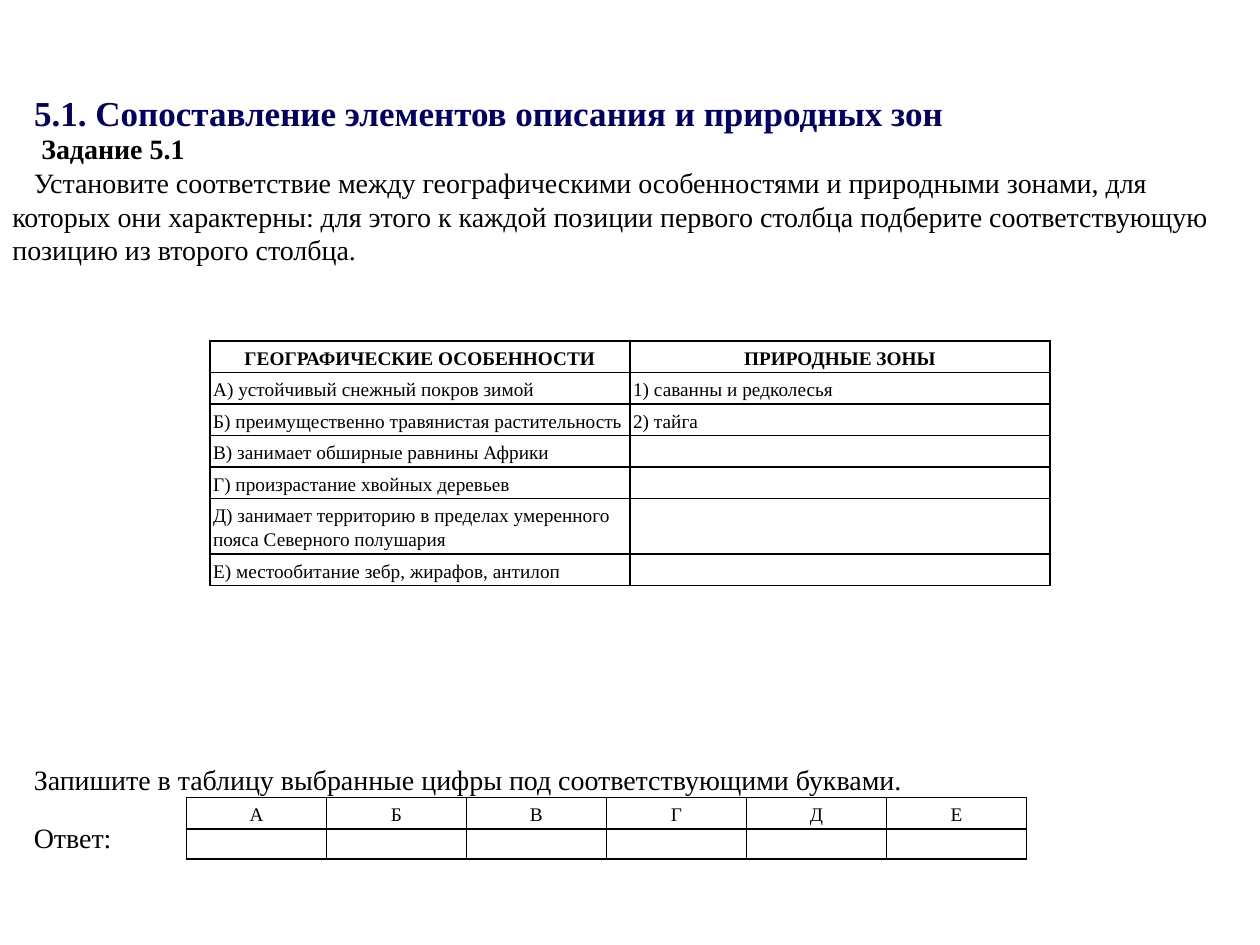
from dataclasses import dataclass

from lxml.etree import SubElement
from pptx import Presentation
from pptx.dml.color import RGBColor
from pptx.enum.text import MSO_ANCHOR as Anchor, MSO_AUTO_SIZE as AutoSize, PP_ALIGN as Align
from pptx.oxml import parse_xml
from pptx.oxml.ns import nsdecls, qn
from pptx.util import Emu, Inches, Pt


@dataclass(frozen=True)
class Theme:
    font: str = "Times New Roman"
    title_color: str = "000066"
    ink: str = "000000"
    title_size: float = 20
    body_size: float = 16
    cell_size: float = 11
    indent: float = 0.17
    cell_margin: float = 0.025
    cell_spacing: float = 1.15
    border: float = 1


@dataclass(frozen=True)
class Grid:
    """A table: left, top and width as shares of the slide, row heights in inches."""
    left: float
    top: float
    width: float
    heights: tuple
    rows: tuple
    header_bold: bool = False


THEME = Theme()
W, H = Inches(10), Inches(7.5)

FEATURES = Grid(
    1 / 6, 0.361, 2 / 3, (0.25,) * 5 + (0.44, 0.25),
    (
        ("ГЕОГРАФИЧЕСКИЕ ОСОБЕННОСТИ", "ПРИРОДНЫЕ ЗОНЫ"),
        ("А) устойчивый снежный покров зимой", "1) саванны и редколесья"),
        ("Б) преимущественно травянистая растительность", "2) тайга"),
        ("В) занимает обширные равнины Африки", ""),
        ("Г) произрастание хвойных деревьев", ""),
        ("Д) занимает территорию в пределах умеренного пояса Северного полушария", ""),
        ("Е) местообитание зебр, жирафов, антилоп", ""),
    ),
    header_bold=True,
)
ANSWERS = Grid(0.148, 0.844, 2 / 3, (0.25, 0.23), (tuple("АБВГДЕ"), ("",) * 6))


def write(p, text: str, *, size=THEME.body_size, color=THEME.ink, bold=False,
          align=Align.LEFT, indent=0.0, before=0, spacing=None) -> None:
    p.alignment = align
    if indent:
        pPr = p._p.get_or_add_pPr()
        pPr.set("marL", "0")
        pPr.set("indent", str(Inches(indent)))
    if before:
        p.space_before = Pt(before)
    if spacing:
        p.line_spacing = spacing
    r = p.add_run()
    r.text = text
    r.font.name, r.font.size, r.font.bold = THEME.font, Pt(size), bold
    r.font.color.rgb = RGBColor.from_string(color)


def place(sp, top: float, height: float):
    """Spread a text shape over the slide's width and return its text frame."""
    sp.left, sp.top, sp.width, sp.height = Emu(0), int(H * top), W, int(H * height)
    tf = sp.text_frame
    tf.word_wrap, tf.auto_size = True, AutoSize.NONE
    tf.vertical_anchor = Anchor.TOP
    return tf


def add_borders(cell) -> None:
    tcPr = cell._tc.get_or_add_tcPr()
    for i, side in enumerate("LRTB"):
        tcPr.insert(i, parse_xml(
            f'<a:ln{side} {nsdecls("a")} w="{Pt(THEME.border)}"><a:solidFill>'
            f'<a:srgbClr val="{THEME.ink}"/></a:solidFill></a:ln{side}>'))


def fill_cell(cell, text: str, is_header: bool, bold: bool) -> None:
    cell.margin_left = cell.margin_right = Inches(THEME.cell_margin)
    cell.margin_top = cell.margin_bottom = Inches(THEME.cell_margin)
    cell.vertical_anchor = Anchor.MIDDLE
    cell.fill.background()
    add_borders(cell)
    p = cell.text_frame.paragraphs[0]
    if text:
        write(p, text, size=THEME.cell_size, bold=bold, spacing=THEME.cell_spacing,
              align=Align.CENTER if is_header else Align.LEFT)
    else:
        SubElement(p._p, qn("a:endParaRPr"), sz=str(int(THEME.cell_size * 100)))


def add_grid(slide, grid: Grid) -> None:
    n_cols = len(grid.rows[0])
    table = slide.shapes.add_table(
        len(grid.rows), n_cols, int(W * grid.left), int(H * grid.top),
        int(W * grid.width), Inches(sum(grid.heights))).table
    table.first_row = table.horz_banding = False
    for col in table.columns:
        col.width = int(W * grid.width / n_cols)
    for i, (height, texts) in enumerate(zip(grid.heights, grid.rows)):
        table.rows[i].height = Inches(height)
        for j, text in enumerate(texts):
            fill_cell(table.cell(i, j), text, i == 0, i == 0 and grid.header_bold)


def main() -> None:
    prs = Presentation()
    prs.slide_width, prs.slide_height = W, H
    slide = prs.slides.add_slide(prs.slide_layouts[5])

    tf = place(slide.shapes.title, 0.09, 0.055)
    write(tf.paragraphs[0], "5.1. Сопоставление элементов описания и природных зон",
          size=THEME.title_size, color=THEME.title_color, bold=True, indent=THEME.indent)

    tf = place(slide.shapes.add_textbox(0, 0, W, H), 0.133, 0.155)
    write(tf.paragraphs[0], "Задание 5.1", bold=True, indent=THEME.indent + 0.06)
    write(tf.add_paragraph(),
          "Установите соответствие между географическими особенностями и природными "
          "зонами, для которых они характерны: для этого к каждой позиции первого "
          "столбца подберите соответствующую позицию из второго столбца.",
          indent=THEME.indent)

    tf = place(slide.shapes.add_textbox(0, 0, W, H), 0.8, 0.11)
    write(tf.paragraphs[0],
          "Запишите в таблицу выбранные цифры под соответствующими буквами.",
          indent=THEME.indent)
    write(tf.add_paragraph(), "Ответ:", indent=THEME.indent, before=14)

    for grid in (FEATURES, ANSWERS):
        add_grid(slide, grid)
    prs.save("out.pptx")


if __name__ == "__main__":
    main()
